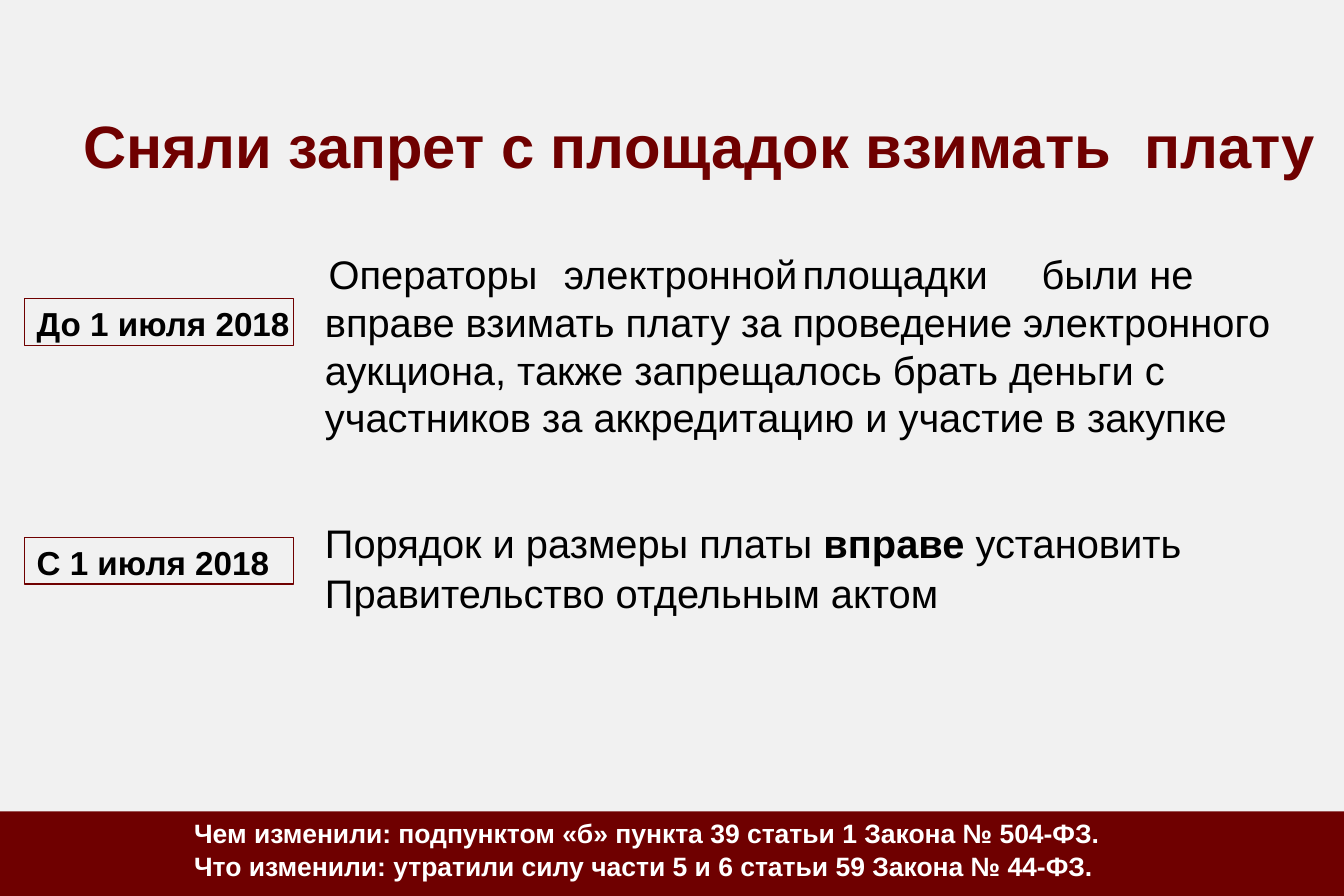
from pptx import Presentation
from pptx.dml.color import RGBColor
from pptx.enum.shapes import MSO_SHAPE
from pptx.enum.text import MSO_ANCHOR, MSO_AUTO_SIZE, PP_ALIGN
from pptx.util import Cm, Pt

RECTANGLE = MSO_SHAPE.RECTANGLE
TOP = MSO_ANCHOR.TOP
GROW = MSO_AUTO_SIZE.SHAPE_TO_FIT_TEXT
LEFT, CENTER = PP_ALIGN.LEFT, PP_ALIGN.CENTER

FONT = "Arial"
MAROON, GREY, BLACK, WHITE = "6F0000", "F1F1F1", "000000", "FFFFFF"
SLIDE_WIDTH, SLIDE_HEIGHT = 28.58, 19.05
TITLE_LAYOUT = 5

TITLE = "Сняли запрет с площадок взимать  плату"
BEFORE = [
    ("Операторы\tэлектронной\tплощадки\tбыли не вправе взимать плату за "
     "проведение электронного аукциона, также запрещалось брать деньги с "
     "участников за аккредитацию и участие в закупке", False),
]
AFTER = [
    ("Порядок и размеры платы ", False),
    ("вправе ", True),
    ("установить Правительство отдельным актом", False),
]
SOURCES = [
    [("Чем изменили: подпунктом «б» пункта 39 статьи 1 Закона № 504-ФЗ.", True)],
    [("Что изменили: утратили силу части 5 и 6 статьи 59 Закона № 44-ФЗ.", True)],
]


def paint(color_format, hex_color):
    color_format.rgb = RGBColor.from_string(hex_color)


def fill_solid(fill, hex_color):
    fill.solid()
    paint(fill.fore_color, hex_color)


def place(shape, box):
    shape.left, shape.top, shape.width, shape.height = (Cm(length) for length in box)


def write(shape, paragraphs, size, color, inset=0.0, before=0.0, margin=0.0,
          first=0.0, line=None, align=LEFT):
    """Fill a shape with paragraphs, each a list of (text, bold) runs."""
    frame = shape.text_frame
    frame.word_wrap = True
    frame.auto_size = GROW
    frame.vertical_anchor = TOP
    frame.margin_left = frame.margin_right = frame.margin_bottom = 0
    frame.margin_top = Cm(inset)
    for index, runs in enumerate(paragraphs):
        paragraph = frame.add_paragraph() if index else frame.paragraphs[0]
        paragraph.alignment = align
        paragraph.space_before = Pt(before)
        if line:
            paragraph.line_spacing = Pt(line)
        properties = paragraph._p.get_or_add_pPr()
        properties.set("marL", str(Cm(margin)))
        properties.set("indent", str(Cm(first)))
        for text, bold in runs:
            run = paragraph.add_run()
            run.text = text
            run.font.name = FONT
            run.font.size = Pt(size)
            run.font.bold = bold
            paint(run.font.color, color)


def add_rectangle(slide, box, fill, line=None):
    shape = slide.shapes.add_shape(RECTANGLE, *(Cm(length) for length in box))
    shape.shadow.inherit = False
    fill_solid(shape.fill, fill)
    if line:
        paint(shape.line.color, line)
        shape.line.width = Pt(0.72)
    else:
        shape.line.fill.background()
    return shape


def add_text(slide, box, paragraphs, size, color, **layout):
    shape = slide.shapes.add_textbox(*(Cm(length) for length in box))
    write(shape, paragraphs, size, color, **layout)


def add_title(slide, box):
    title = slide.shapes.title
    place(title, box)
    write(title, [[(TITLE, True)]], 36, MAROON, inset=0.69, before=7,
          margin=0.97, line=47.6, align=CENTER)


def add_period(slide, box, label, runs, text_left, text_rise, **layout):
    """Place a framed date label and its explanation, offset from the label."""
    left, top, width, height = box
    frame = add_rectangle(slide, (left, top, 5.72, 0.99), GREY, MAROON)
    write(frame, [[(label, True)]], 20, BLACK, inset=0.1, before=3, margin=0.25)
    text_box = (left + text_left, top - text_rise, width - text_left, height)
    add_text(slide, text_box, [runs], 24, BLACK, **layout)


def add_footer(slide, box):
    left, top, width, height = box
    add_rectangle(slide, box, MAROON)
    text_box = (left + 4.11, top + 0.08, 20.75, height - 0.38)
    add_text(slide, text_box, SOURCES, 16, WHITE, inset=0.03, before=1,
             margin=0.1, first=-0.08)


def main():
    presentation = Presentation()
    presentation.slide_width = Cm(SLIDE_WIDTH)
    presentation.slide_height = Cm(SLIDE_HEIGHT)
    slide = presentation.slides.add_slide(presentation.slide_layouts[TITLE_LAYOUT])
    fill_solid(slide.background.fill, GREY)

    add_title(slide, (0.74, 1.47, 27.31, 2.36))
    add_period(slide, (0.53, 6.35, 27.03, 4.09), "До 1 июля 2018", BEFORE,
               5.72, 1.07, inset=0.03, before=1, margin=0.66, first=0.08)
    add_period(slide, (0.53, 11.43, 27.54, 2.31), "С 1 июля 2018", AFTER,
               6.35, 0.63, inset=0.18, before=4.8, margin=0.03, line=30.2)
    add_footer(slide, (0, 17.25, SLIDE_WIDTH, 1.8))

    presentation.save("out.pptx")


if __name__ == "__main__":
    main()
